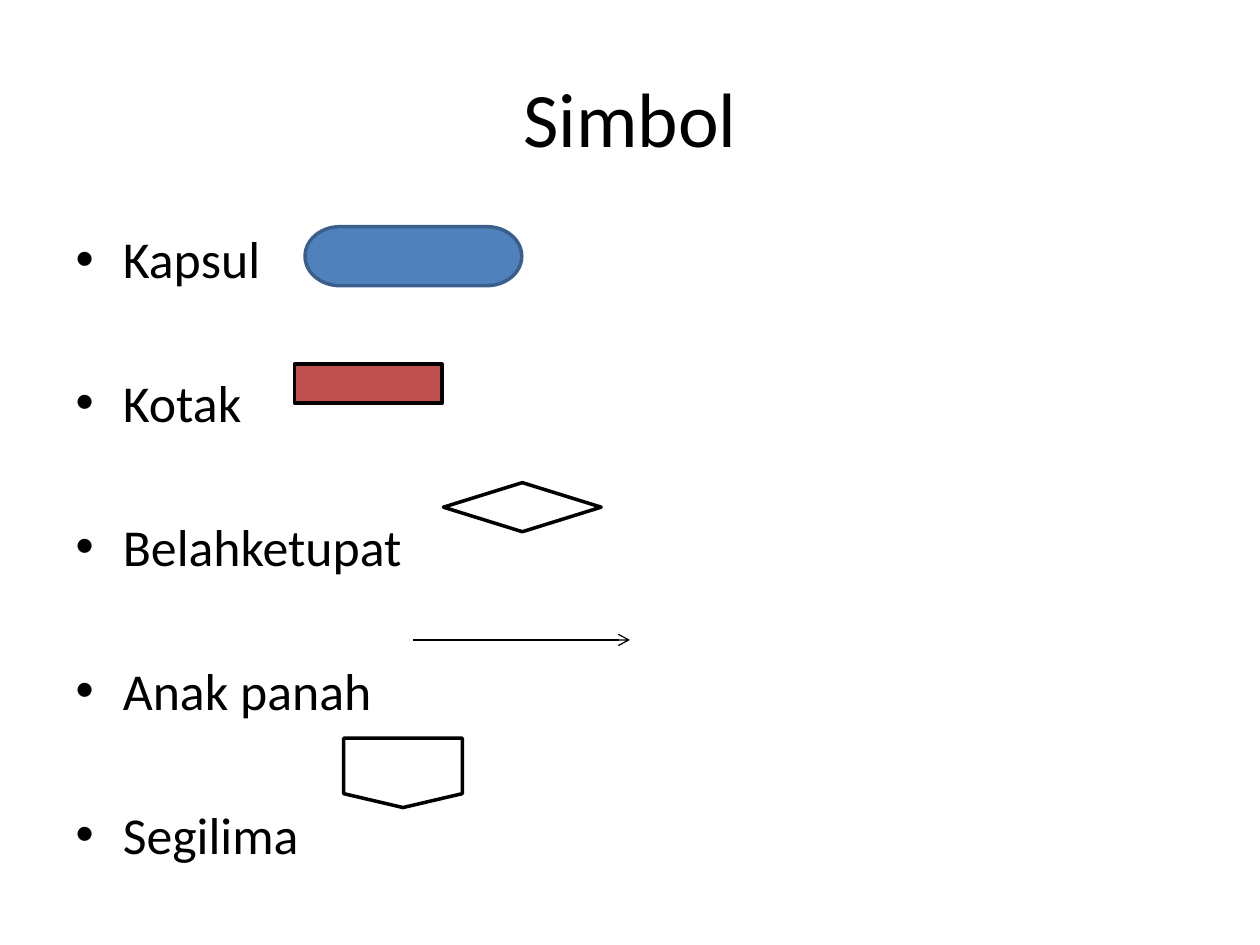
from lxml import etree
from pptx import Presentation
from pptx.dml.color import RGBColor
from pptx.enum import shapes, text
from pptx.oxml.ns import qn
from pptx.util import Cm, Pt

TITLE = "Simbol"
ITEMS = ["Kapsul", "Kotak", "Belahketupat", "Anak panah", "Segilima"]
KIND = shapes.MSO_SHAPE
# kind, (left, top, width, height) in cm, fill, line
SYMBOLS = [
    (KIND.RECTANGLE, (5.94, 7.34, 2.97, 0.79), "C0504D", "000000"),
    (KIND.DIAMOND, (8.94, 9.73, 3.18, 0.99), "FFFFFF", "000000"),
    (KIND.FLOWCHART_OFFPAGE_CONNECTOR, (6.93, 14.88, 2.39, 1.4), "FFFFFF", "000000"),
    (KIND.FLOWCHART_TERMINATOR, (6.15, 4.57, 4.37, 1.19), "4F81BD", "3A5F8C"),
]
ARROW = (8.33, 12.9, 12.7, 12.9)


def paint(color, code):
    color.rgb = RGBColor.from_string(code)


def place(shape, left, top, width, height):
    shape.left, shape.top = Cm(left), Cm(top)
    shape.width, shape.height = Cm(width), Cm(height)


def write(para, words, size):
    run = para.add_run()
    run.text = words
    run.font.name = "Calibri"
    run.font.size = Pt(size)
    paint(run.font.color, "000000")


prs = Presentation()
prs.slide_width, prs.slide_height = Cm(25.4), Cm(19.05)
slide = prs.slides.add_slide(prs.slide_layouts[1])
title, body = slide.placeholders

place(title, 1.27, 0.76, 22.86, 3.18)
frame = title.text_frame
frame.vertical_anchor = text.MSO_ANCHOR.MIDDLE
frame.paragraphs[0].alignment = text.PP_ALIGN.CENTER
write(frame.paragraphs[0], TITLE, 44)

place(body, 1.27, 4.45, 22.86, 12.57)
frame = body.text_frame
frame.auto_size = text.MSO_AUTO_SIZE.NONE
for i, item in enumerate(ITEMS):
    para = frame.add_paragraph() if i else frame.paragraphs[0]
    para.space_before = Pt(46.7 if i else 0)
    write(para, item, 29.6)

for kind, box, fill, line in SYMBOLS:
    shape = slide.shapes.add_shape(kind, *map(Cm, box))
    shape.shadow.inherit = False
    shape.fill.solid()
    paint(shape.fill.fore_color, fill)
    paint(shape.line.color, line)
    shape.line.width = Pt(2)

arrow = slide.shapes.add_connector(shapes.MSO_CONNECTOR.STRAIGHT, *map(Cm, ARROW))
paint(arrow.line.color, "000000")
arrow.line.width = Pt(0.75)
etree.SubElement(arrow.line._get_or_add_ln(), qn("a:tailEnd"), type="arrow")
etree.SubElement(arrow._element.spPr, qn("a:effectLst"))

prs.save("out.pptx")
